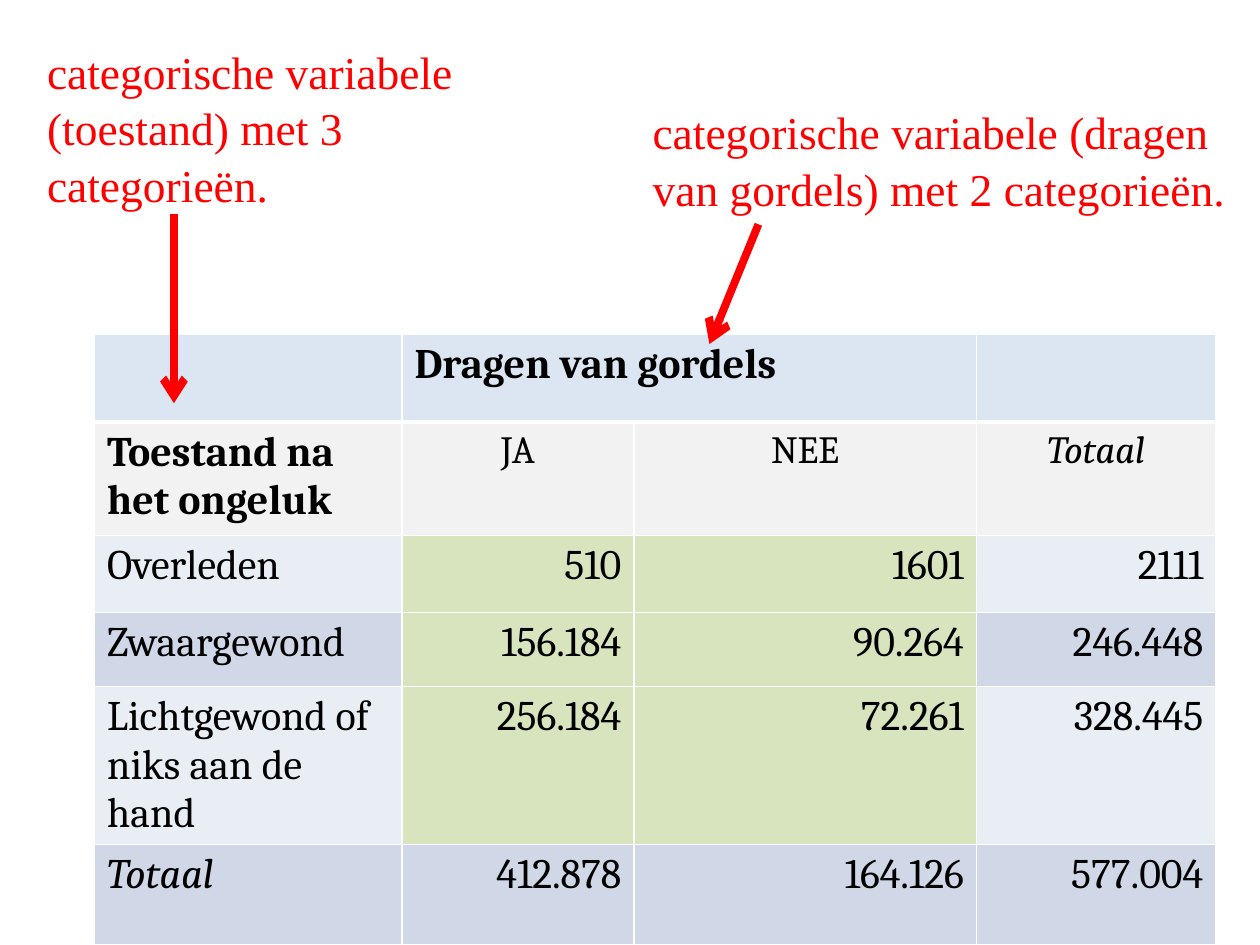
from lxml.etree import SubElement
from pptx import Presentation
from pptx.dml.color import RGBColor
from pptx.enum.shapes import MSO_CONNECTOR
from pptx.enum.text import MSO_AUTO_SIZE, PP_ALIGN
from pptx.oxml import parse_xml
from pptx.oxml.ns import nsdecls, qn
from pptx.util import Pt

RED = RGBColor(0xFF, 0x00, 0x00)
BLACK = RGBColor(0x00, 0x00, 0x00)
HEADER_BLUE = RGBColor(0xDC, 0xE6, 0xF2)
LABEL_GREY = RGBColor(0xF2, 0xF2, 0xF2)
BAND_LIGHT = RGBColor(0xE9, 0xED, 0xF4)
BAND_DARK = RGBColor(0xD0, 0xD8, 0xE8)
COUNT_GREEN = RGBColor(0xD7, 0xE4, 0xBD)

COLUMN_WIDTHS = [175.7, 132.5, 195.8, 136.8]
ROW_HEIGHTS = [50.4, 64.8, 43.9, 42.5, 64.8, 57.6]
ROWS = [
    ["", "Dragen van gordels", "", ""],
    ["Toestand na het ongeluk", "JA", "NEE", "Totaal"],
    ["Overleden", "510", "1601", "2111"],
    ["Zwaargewond", "156.184", "90.264", "246.448"],
    ["Lichtgewond of\nniks aan de hand", "256.184", "72.261", "328.445"],
    ["Totaal", "412.878", "164.126", "577.004"],
]


def style_text(frame, font_name, size, color, align=PP_ALIGN.LEFT, bold=False, italic=False):
    for paragraph in frame.paragraphs:
        paragraph.alignment = align
        for run in paragraph.runs:
            font = run.font
            font.name, font.size = font_name, Pt(size)
            font.bold, font.italic = bold, italic
            font.color.rgb = color


def cell_fill(row, column):
    if row < 2:
        return (HEADER_BLUE, LABEL_GREY)[row]
    if row < 5 and column in (1, 2):
        return COUNT_GREEN
    return BAND_DARK if row % 2 else BAND_LIGHT


def add_header_borders(cell):
    properties = cell._tc.get_or_add_tcPr()
    for index, (side, width) in enumerate([("L", 1), ("R", 1), ("T", 1), ("B", 3)]):
        properties.insert(index, parse_xml(
            f'<a:ln{side} {nsdecls("a")} w="{Pt(width)}"><a:solidFill>'
            f'<a:srgbClr val="FFFFFF"/></a:solidFill></a:ln{side}>'))


def add_belt_table(slide, left, top):
    frame = slide.shapes.add_table(
        len(ROWS), len(COLUMN_WIDTHS), Pt(left), Pt(top),
        Pt(sum(COLUMN_WIDTHS)), Pt(sum(ROW_HEIGHTS)))
    table = frame.table
    for column, width in zip(table.columns, COLUMN_WIDTHS):
        column.width = Pt(width)
    for row, height in zip(table.rows, ROW_HEIGHTS):
        row.height = Pt(height)
    table.cell(0, 1).merge(table.cell(0, 2))

    for r, texts in enumerate(ROWS):
        for c, text in enumerate(texts):
            cell = table.cell(r, c)
            cell.fill.solid()
            cell.fill.fore_color.rgb = cell_fill(r, c)
            if r == 0:
                add_header_borders(cell)
            cell.text_frame.text = text
            if r == 0 or c == 0:
                align = PP_ALIGN.LEFT
            else:
                align = PP_ALIGN.CENTER if r == 1 else PP_ALIGN.RIGHT
            style_text(cell.text_frame, "Cambria", 22 if r == 1 and c else 24, BLACK,
                       align, bold=r == 0 or (r, c) == (1, 0), italic=text == "Totaal")


def add_note(slide, text, left, top, width, height):
    note = slide.shapes.add_textbox(Pt(left), Pt(top), Pt(width), Pt(height))
    frame = note.text_frame
    frame.word_wrap = True
    frame.auto_size = MSO_AUTO_SIZE.SHAPE_TO_FIT_TEXT
    frame.text = text
    frame.paragraphs[0].line_spacing = 1.04
    style_text(frame, "Times New Roman", 26, RED)


def add_arrow(slide, start, end):
    arrow = slide.shapes.add_connector(
        MSO_CONNECTOR.STRAIGHT, *(Pt(value) for value in (*start, *end)))
    arrow.line.color.rgb = RED
    arrow.line.width = Pt(4.5)
    SubElement(arrow.line._get_or_add_ln(), qn("a:tailEnd"), type="arrow")
    SubElement(arrow._element.spPr, qn("a:effectLst"))


def main():
    presentation = Presentation()
    presentation.slide_width, presentation.slide_height = Pt(720), Pt(540)
    slide = presentation.slides.add_slide(presentation.slide_layouts[6])
    add_belt_table(slide, 54, 190.8)
    add_note(slide, "categorische variabele (dragen van gordels) met 2 categorieën.",
             365.8, 54.7, 354.2, 70.6)
    add_note(slide, "categorische variabele (toestand) met 3 categorieën.",
             19.8, 20.2, 277.9, 101.5)
    add_arrow(slide, (433.4, 128.2), (405.4, 196.6))
    add_arrow(slide, (99.4, 122.4), (99.4, 230.4))
    presentation.save("out.pptx")


if __name__ == "__main__":
    main()
